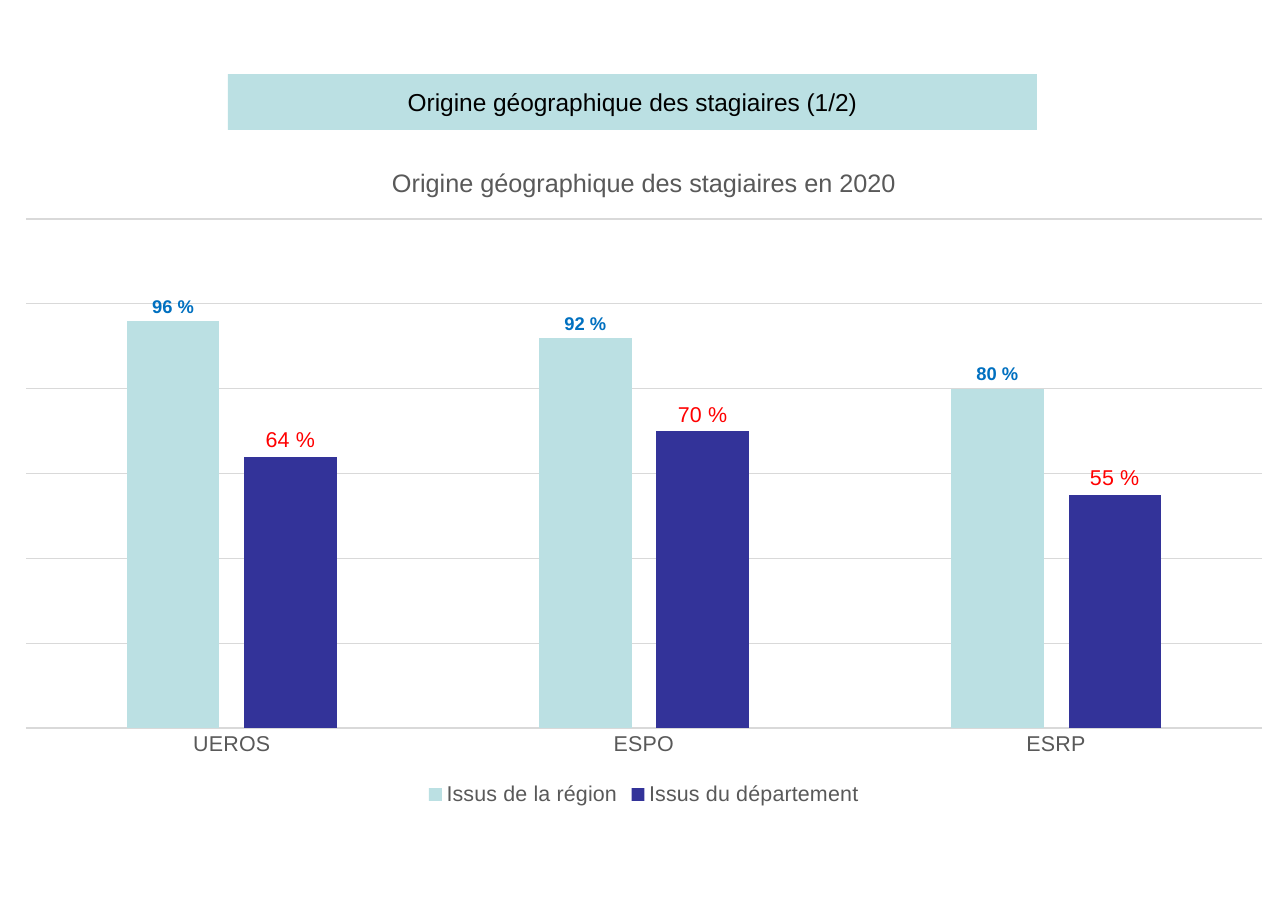
"""Build the slide on the geographic origin of trainees."""
import pptx
import pptx.chart.data
import pptx.dml.color
import pptx.enum.chart
import pptx.enum.text
import pptx.oxml
import pptx.oxml.ns
import pptx.util

PX = 8298
AQUA = pptx.dml.color.RGBColor(0xBB, 0xE0, 0xE3)
NAVY = pptx.dml.color.RGBColor(0x33, 0x33, 0x99)
BLUE = pptx.dml.color.RGBColor(0x00, 0x70, 0xC0)
RED = pptx.dml.color.RGBColor(0xFF, 0x00, 0x00)
BLACK = pptx.dml.color.RGBColor(0x00, 0x00, 0x00)
GREY = pptx.dml.color.RGBColor(0x59, 0x59, 0x59)
RULE = pptx.dml.color.RGBColor(0xD9, 0xD9, 0xD9)
PERCENT = r"##0\ %"


def px(*lengths):
    return [pptx.util.Emu(n * PX) for n in lengths]


def set_font(font, size, color, bold=False):
    font.name = "Arial"
    font.size = pptx.util.Pt(size)
    font.bold = bold
    font.color.rgb = color


prs = pptx.Presentation()
prs.slide_width, prs.slide_height = px(1288, 911)
s = prs.slides.add_slide(prs.slide_layouts[5])

sp = s.shapes.title
sp.left, sp.top, sp.width, sp.height = px(228, 74, 809, 56)
sp.fill.solid()
sp.fill.fore_color.rgb = AQUA
tf = sp.text_frame
tf.text = "Origine géographique des stagiaires (1/2)"
tf.word_wrap = False
tf.auto_size = pptx.enum.text.MSO_AUTO_SIZE.NONE
tf.vertical_anchor = pptx.enum.text.MSO_ANCHOR.MIDDLE
p = tf.paragraphs[0]
p.alignment = pptx.enum.text.PP_ALIGN.CENTER
set_font(p.font, 16, BLACK)

data = pptx.chart.data.CategoryChartData(number_format=PERCENT)
data.categories = ["UEROS", "ESPO", "ESRP"]
data.add_series("Issus de la région", [0.96, 0.92, 0.8])
data.add_series("Issus du département", [0.64, 0.7, 0.55])
chart = s.shapes.add_chart(
    pptx.enum.chart.XL_CHART_TYPE.COLUMN_CLUSTERED, *px(0, 143, 1288, 668), data
).chart
set_font(chart.font, 14, BLACK)

chart.has_title = True
tf = chart.chart_title.text_frame
tf.text = "Origine géographique des stagiaires en 2020"
set_font(tf.paragraphs[0].font, 16.5, GREY)
chart.chart_title.include_in_layout = False

chart.has_legend = True
chart.legend.position = pptx.enum.chart.XL_LEGEND_POSITION.BOTTOM
chart.legend.include_in_layout = False
set_font(chart.legend.font, 14, GREY)

axis = chart.category_axis
axis.major_tick_mark = pptx.enum.chart.XL_TICK_MARK.NONE
set_font(axis.tick_labels.font, 14, GREY)
values = chart.value_axis
values.visible = False
values.minimum_scale, values.maximum_scale, values.major_unit = 0, 1.2, 0.2
values.has_major_gridlines = True
for line in (axis.format.line, values.major_gridlines.format.line):
    line.color.rgb = RULE
    line.width = pptx.util.Pt(0.75)

plot = chart.plots[0]
plot.gap_width = 219
plot.overlap = -27
plot.vary_by_categories = False
styles = [(AQUA, 12, BLUE, True), (NAVY, 14, RED, False)]
for series, (fill, size, color, bold) in zip(plot.series, styles):
    series.format.fill.solid()
    series.format.fill.fore_color.rgb = fill
    labels = series.data_labels
    labels.show_value = True
    labels.number_format = PERCENT
    labels.number_format_is_linked = False
    labels.position = pptx.enum.chart.XL_LABEL_POSITION.OUTSIDE_END
    set_font(labels.font, size, color, bold)

area = chart.element.find(".//" + pptx.oxml.ns.qn("c:plotArea"))
for layout in area.findall(pptx.oxml.ns.qn("c:layout")):
    area.remove(layout)
area.insert(0, pptx.oxml.parse_xml(
    f'<c:layout {pptx.oxml.ns.nsdecls("c")}><c:manualLayout>'
    '<c:layoutTarget val="inner"/><c:xMode val="edge"/><c:yMode val="edge"/>'
    '<c:x val="0.02"/><c:y val="0.114"/><c:w val="0.96"/><c:h val="0.762"/>'
    '</c:manualLayout></c:layout>'))

prs.save("out.pptx")
